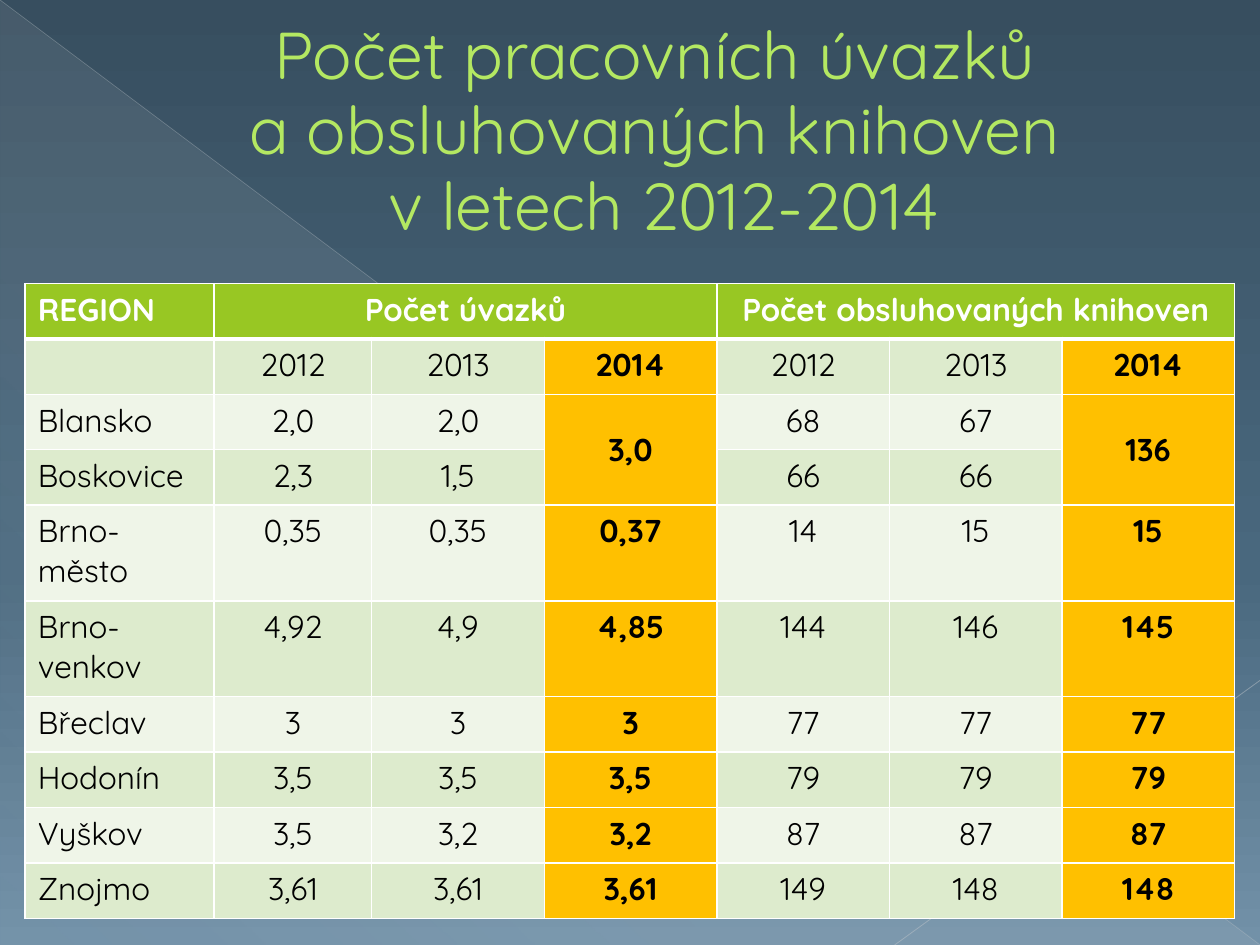
from itertools import product

from lxml import etree
from pptx import Presentation
from pptx import util as u
from pptx.dml.color import RGBColor
from pptx.enum import shapes, text
from pptx.oxml import ns

WIDTH, HEIGHT = u.Inches(10), u.Inches(7.5)
FONT = "Quicksand"
COLORS = {
    "sky_top": "374E5F", "sky_middle": "49687E", "sky_bottom": "7291A8",
    "veil": "E7ECED", "diagonal": "BAC0C6", "corner": "C2C7CC",
    "title": "B4E862", "title_edge": "698A18",
    "header": "98C723", "odd": "DDEBCD", "even": "EFF5E8",
    "latest": "FFC000", "white": "FFFFFF", "black": "000000",
}
TITLE = "Počet pracovních úvazků \na obsluhovaných knihoven \nv letech 2012-2014"
REGIONS = [
    ["REGION", "Počet úvazků", None, None, "Počet obsluhovaných knihoven", None, None],
    [None, "2012", "2013", "2014", "2012", "2013", "2014"],
    ["Blansko", "2,0", "2,0", "3,0", "68", "67", "136"],
    ["Boskovice", "2,3", "1,5", None, "66", "66", None],
    ["Brno-město", "0,35", "0,35", "0,37", "14", "15", "15"],
    ["Brno-venkov", "4,92", "4,9", "4,85", "144", "146", "145"],
    ["Břeclav", "3", "3", "3", "77", "77", "77"],
    ["Hodonín", "3,5", "3,5", "3,5", "79", "79", "79"],
    ["Vyškov", "3,5", "3,2", "3,2", "87", "87", "87"],
    ["Znojmo", "3,61", "3,61", "3,61", "149", "148", "148"],
]
LATEST_COLUMNS = (3, 6)
SPANS = [(0, 1, 0, 3), (0, 4, 0, 6), (2, 3, 3, 3), (2, 6, 3, 6)]
COLUMN_UNITS = [150, 125] + [137] * 5
ROW_UNITS = [11] * 4 + [19] * 2 + [11] * 4


def color(name):
    return RGBColor.from_string(COLORS[name])


def on_slide(box):
    left, top, width, height = box
    return int(left * WIDTH), int(top * HEIGHT), int(width * WIDTH), int(height * HEIGHT)


def add(parent, tag, **attributes):
    child = etree.SubElement(parent, ns.qn(tag))
    for key, value in attributes.items():
        child.set(key, str(value))
    return child


def add_color(parent, name, opacity=100):
    tint = add(parent, "a:srgbClr", val=COLORS[name])
    if opacity < 100:
        add(tint, "a:alpha", val=opacity * 1000)


def set_gradient(fill, owner, stops, angle):
    fill.solid()
    solid = next(owner.iter(ns.qn("a:solidFill")))
    gradient = etree.Element(ns.qn("a:gradFill"), rotWithShape="1")
    stop_list = add(gradient, "a:gsLst")
    for position, name, opacity in stops:
        add_color(add(stop_list, "a:gs", pos=position * 1000), name, opacity)
    add(gradient, "a:lin", ang=angle * 60000, scaled=0)
    solid.getparent().replace(solid, gradient)


def write(frame, words, size=18, ink="black", bold=False, align=text.PP_ALIGN.CENTER,
          anchor=text.MSO_ANCHOR.TOP, spacing=None, edge=None):
    frame.word_wrap = True
    frame.vertical_anchor = anchor
    paragraph = frame.paragraphs[0]
    paragraph.text = words
    paragraph.alignment = align
    paragraph.line_spacing = spacing
    for run in paragraph.runs:
        run.font.name, run.font.size, run.font.bold = FONT, u.Pt(size), bold
        run.font.color.rgb = color(ink)
        if edge:
            outline = etree.Element(ns.qn("a:ln"), w=str(u.Pt(0.5)))
            add_color(add(outline, "a:solidFill"), edge)
            run.font.color.rgb = color(ink)
            run._r.get_or_add_rPr().insert(0, outline)


def draw_backdrop(slide, box):
    set_gradient(slide.background.fill, slide.element,
                 [(0, "sky_top", 100), (60, "sky_middle", 100), (100, "sky_bottom", 100)], 90)
    left, top, width, height = on_slide(box)
    veil = slide.shapes.add_shape(shapes.MSO_SHAPE.RIGHT_TRIANGLE, left, top, width, height)
    veil.shadow.inherit = False
    veil.line.fill.background()
    set_gradient(veil.fill, veil.element.spPr,
                 [(0, "veil", 10), (70, "veil", 8), (100, "veil", 1)], 133)
    rays = [((0, 0), (1, 1), "diagonal", 0.39, 35),
            ((1, 0.72), (0.71, 1), "corner", 0.47, 45)]
    for (x1, y1), (x2, y2), name, weight, opacity in rays:
        ray = slide.shapes.add_connector(
            shapes.MSO_CONNECTOR.STRAIGHT,
            int(left + x1 * width), int(top + y1 * height),
            int(left + x2 * width), int(top + y2 * height))
        ray.line.width = u.Pt(weight)
        ray.line.color.rgb = color(name)
        properties = ray.element.spPr
        add(next(properties.iter(ns.qn("a:srgbClr"))), "a:alpha", val=opacity * 1000)
        add(properties, "a:effectLst")


def draw_title(slide, box):
    title = slide.shapes.add_textbox(*on_slide(box)).text_frame
    title.margin_left = u.Inches(0.63)
    write(title, TITLE, size=37.8, ink="title", anchor=text.MSO_ANCHOR.MIDDLE,
          spacing=0.95, edge="title_edge")


def set_borders(cell, bottom):
    properties = cell._tc.get_or_add_tcPr()
    for side, weight in (("L", 1), ("R", 1), ("T", 1), ("B", bottom)):
        border = add(properties, f"a:ln{side}", w=u.Pt(weight))
        add_color(add(border, "a:solidFill"), "white")


def draw_regions(slide, box):
    left, top, width, height = on_slide(box)
    table = slide.shapes.add_table(len(REGIONS), len(COLUMN_UNITS),
                                   left, top, width, height).table
    for column, units in zip(table.columns, COLUMN_UNITS):
        column.width = width * units // sum(COLUMN_UNITS)
    for row, units in zip(table.rows, ROW_UNITS):
        row.height = height * units // sum(ROW_UNITS)
    for r1, c1, r2, c2 in SPANS:
        table.cell(r1, c1).merge(table.cell(r2, c2))
    for r, c in product(range(len(REGIONS)), range(len(COLUMN_UNITS))):
        cell, words = table.cell(r, c), REGIONS[r][c]
        header, latest = r == 0, c in LATEST_COLUMNS
        set_borders(cell, 3 if header else 1)
        cell.fill.solid()
        band = "odd" if r % 2 else "even"
        cell.fill.fore_color.rgb = color("header" if header else "latest" if latest else band)
        if words:
            write(cell.text_frame, words, ink="white" if header else "black",
                  bold=header or latest,
                  align=text.PP_ALIGN.CENTER if c else text.PP_ALIGN.LEFT)
        tall = cell.is_merge_origin and cell.span_height > 1
        cell.vertical_anchor = text.MSO_ANCHOR.MIDDLE if tall else text.MSO_ANCHOR.TOP


def main():
    deck = Presentation()
    deck.slide_width, deck.slide_height = WIDTH, HEIGHT
    slide = deck.slides.add_slide(deck.slide_layouts[6])
    draw_backdrop(slide, (0, 0, 1, 1))
    draw_title(slide, (0.05, 0.04, 0.9, 0.2))
    draw_regions(slide, (0.02, 0.3, 0.96, 0.672))
    deck.save("out.pptx")


if __name__ == "__main__":
    main()
